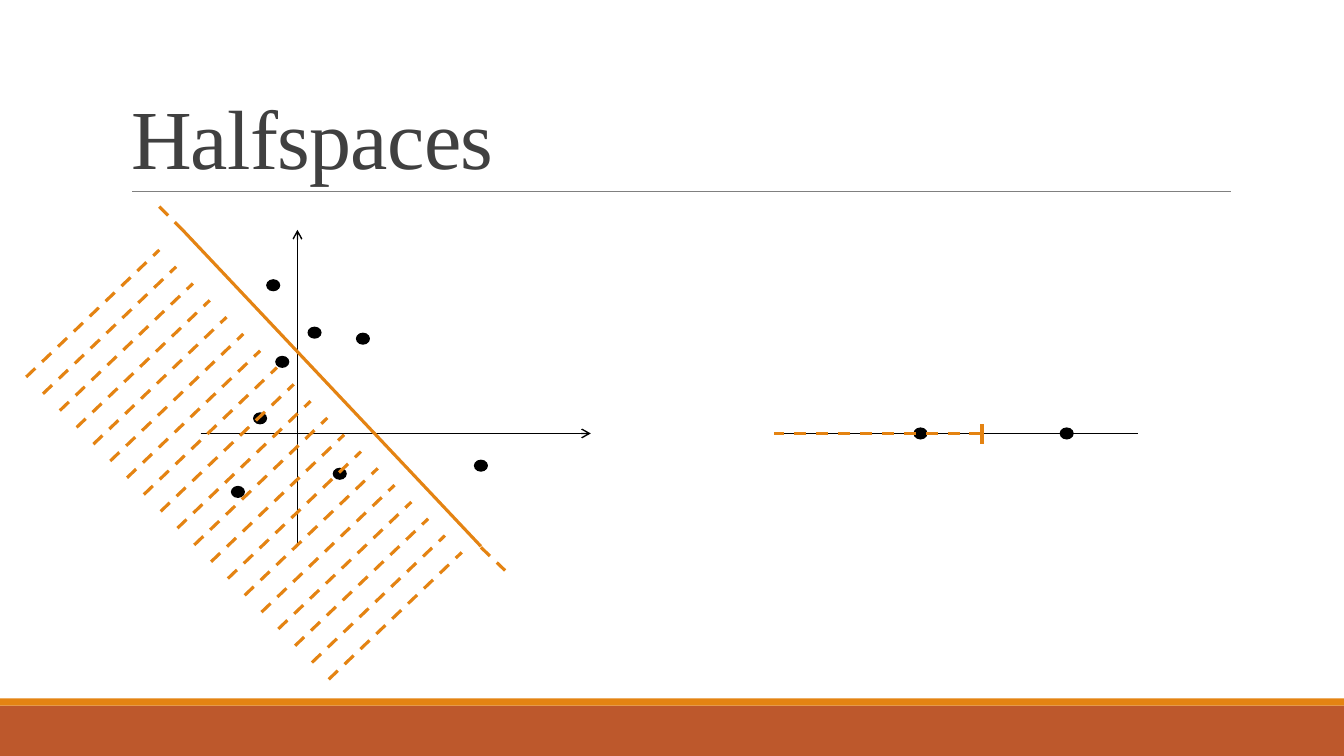
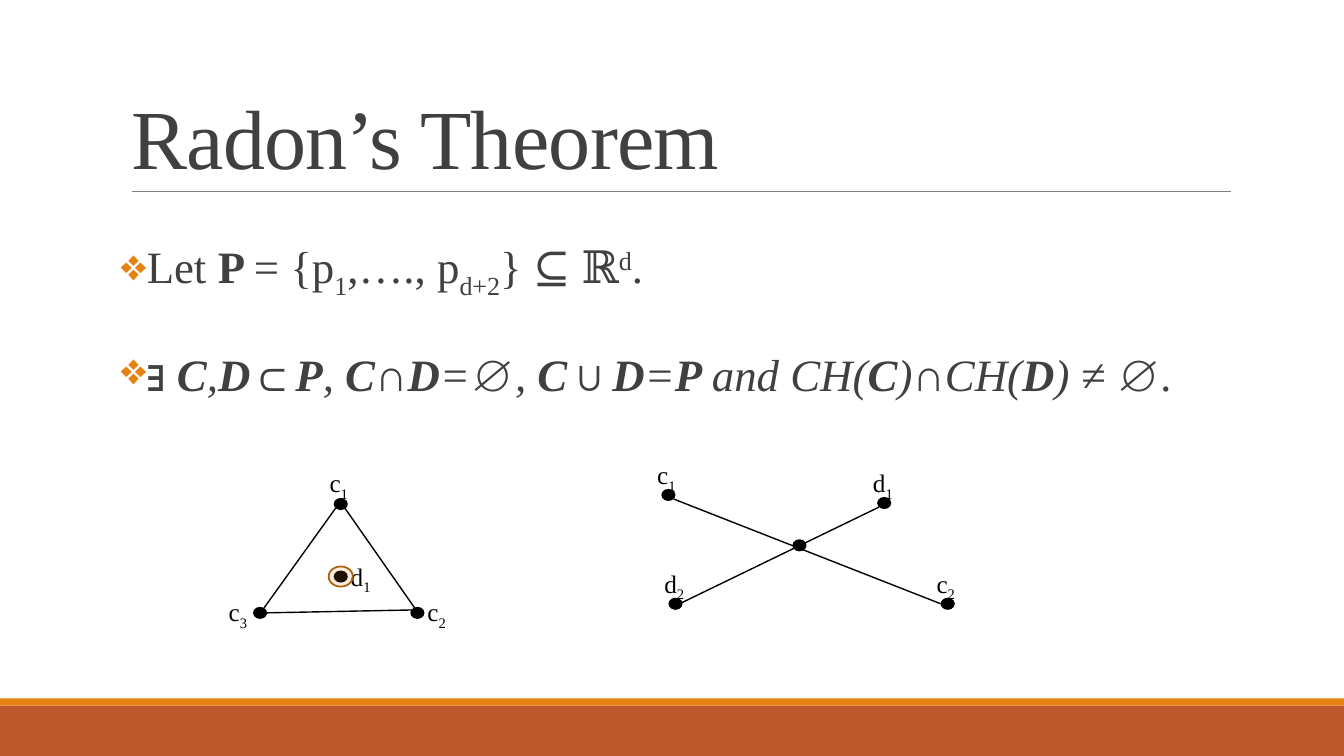
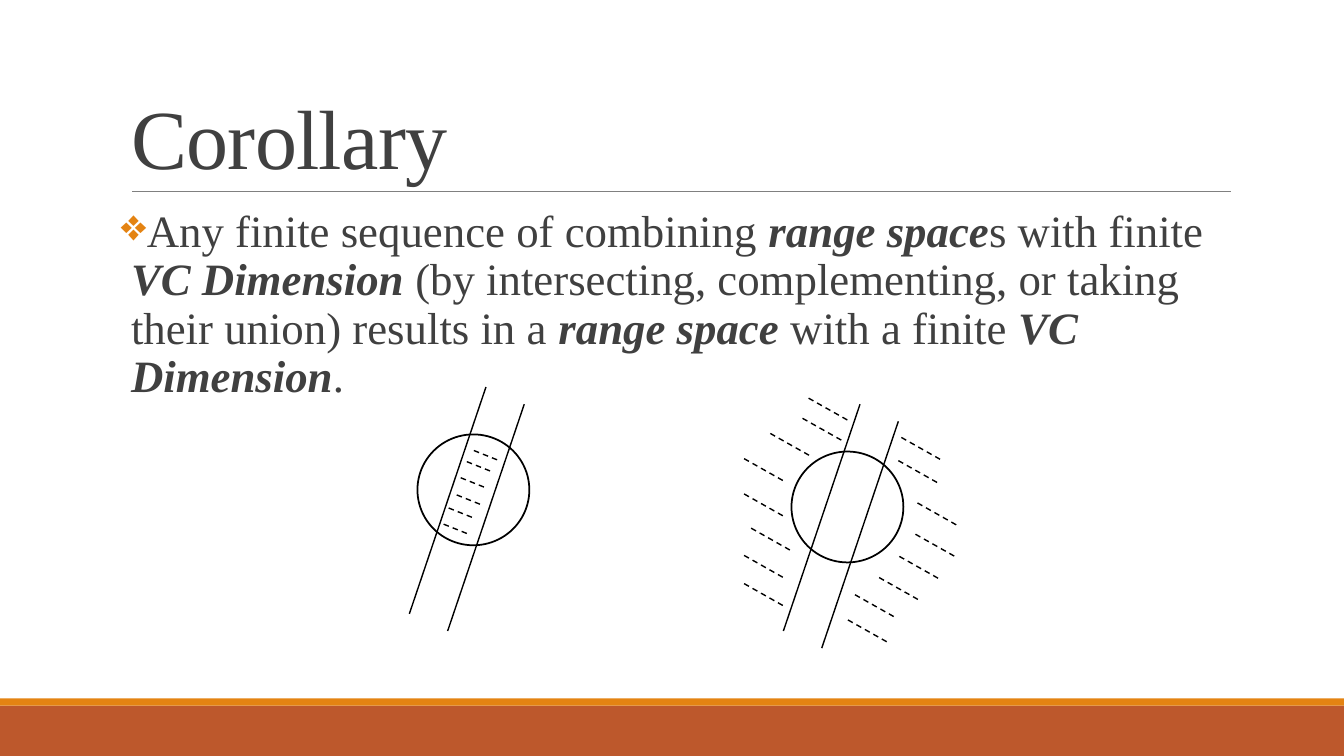
from lxml import etree
from pptx import Presentation
from pptx import util as u
from pptx.dml.color import RGBColor
from pptx.enum import dml, shapes, text
from pptx.oxml.ns import qn

BLACK = RGBColor(0, 0, 0)
GREY = RGBColor(0x40, 0x40, 0x40)
RULE = RGBColor(0x80, 0x80, 0x80)
GOLD = RGBColor(0xE4, 0x83, 0x12)
BROWN = RGBColor(0xA9, 0x61, 0x0D)
RUST = RGBColor(0xBD, 0x58, 0x2C)
FONT = "Times New Roman"
DOT = (0.14, 0.12)
SHIFT = {"sub": -25000, "sup": 30000}

POINTS = [(2.64, 2.77), (3.53, 3.3), (2.51, 4.09), (2.73, 3.53), (3.05, 3.24),
          (3.3, 4.64), (4.7, 4.56), (2.29, 4.82)]
AXES = [(2.95, 5.42, 2.95, 2.28), (1.99, 4.3, 5.86, 4.3)]
EDGE = (1.81, 2.28, 4.77, 5.42)
ENDS = [(4.77, 5.43, 5.01, 5.66), (1.58, 2.05, 1.81, 2.28)]
PAIR = [(9.06, 4.24), (10.51, 4.24)]

RADON = [
    [("Let ", ""), ("P ", "b"), ("= {p", ""), ("1", "sub"), (",…., p", ""),
     ("d+2", "sub"), ("} ⊆ ℝ", ""), ("d", "sup"), (".", "")],
    [("∃ ", "i"), ("C", "bi"), (",", "i"), ("D", "bi"), ("⊂", "i"), ("P", "bi"),
     (", ", "i"), ("C", "bi"), ("∩", "i"), ("D", "bi"), ("=∅, ", "i"), ("C", "bi"),
     ("∪", "i"), ("D", "bi"), ("=", "i"), ("P ", "bi"), ("and CH(", "i"),
     ("C", "bi"), (")∩CH(", "i"), ("D", "bi"), (") ≠ ∅.", "i")],
]
LABELS = [
    ("d", "1", (3.31, 5.66), (3.38, 5.52)),
    ("c", "1", (3.31, 4.94), (3.17, 4.59)),
    ("c", "2", (4.07, 6.02), (4.14, 5.87)),
    ("c", "3", (2.51, 6.02), (2.17, 5.87)),
    ("c", "1", (6.56, 4.85), (6.42, 4.51)),
    ("c", "2", (9.33, 5.93), (9.19, 5.59)),
    ("d", "2", (6.63, 5.93), (6.49, 5.59)),
    ("d", "1", (8.7, 4.93), (8.56, 4.59)),
]
SIDES = [(3.42, 5.04, 4.14, 6.07), (2.64, 6.08, 4.15, 6.05), (2.62, 6.03, 3.33, 5.04),
         (6.68, 4.95, 9.33, 5.99), (6.74, 5.99, 8.72, 5.03)]
CROSS = (7.86, 5.35)

COROL = [[
    ("Any finite sequence of combining ", ""), ("range space", "bi"),
    ("s with finite ", ""), ("VC Dimension ", "bi"),
    ("(by intersecting, complementing, or taking their union) results in a ", ""),
    ("range space ", "bi"), ("with a finite ", ""), ("VC Dimension", "bi"), (".", ""),
]]
STRIPS = [
    ((4.14, 4.31), (0.25, 0.1),
     [(4.7, 4.47), (4.63, 4.58), (4.57, 4.74), (4.53, 4.91), (4.45, 5.04), (4.4, 5.2)]),
    ((7.85, 4.48), (0.39, 0.22),
     [(8.02, 3.95), (7.96, 4.15), (7.64, 4.3), (7.38, 4.55), (7.38, 4.9), (7.45, 5.24),
      (7.38, 5.51), (7.38, 5.79), (8.94, 4.34), (8.91, 4.57), (9.1, 4.99), (9.08, 5.3),
      (8.92, 5.52), (8.72, 5.73), (8.48, 5.9), (8.41, 6.15)]),
]


def inch(vals):
    return [u.Inches(v) for v in vals]


def line(tree, ends, color=BLACK, width=1, dash=False, arrow=False):
    con = tree.add_connector(shapes.MSO_CONNECTOR.STRAIGHT, *inch(ends))
    con.line.color.rgb = color
    con.line.width = u.Pt(width)
    if dash:
        con.line.dash_style = dml.MSO_LINE.DASH
    if arrow:
        etree.SubElement(con.line._get_or_add_ln(), qn("a:tailEnd"), type="arrow")
    etree.SubElement(con.element.spPr, qn("a:effectLst"))
    return con


def shape(tree, kind, box, fill=None, edge=None):
    shp = tree.add_shape(kind, *inch(box))
    shp.shadow.inherit = False
    if fill is None:
        shp.fill.background()
    else:
        shp.fill.solid()
        shp.fill.fore_color.rgb = fill
    if edge is None:
        shp.line.fill.background()
    else:
        shp.line.color.rgb = edge
        shp.line.width = u.Pt(1.25)
    return shp


def oval(tree, box, fill=None, edge=None):
    return shape(tree, shapes.MSO_SHAPE.OVAL, box, fill, edge)


def dots(tree, spots):
    for spot in spots:
        oval(tree, spot + DOT, BLACK)


def runs(par, parts, size, color):
    for words, style in parts:
        run = par.add_run()
        run.text = words
        font = run.font
        font.name, font.size = FONT, u.Pt(size)
        font.color.rgb = color
        font.bold, font.italic = style in ("b", "bi"), style in ("i", "bi")
        if style in SHIFT:
            run._r.get_or_add_rPr().set("baseline", str(SHIFT[style]))


def body(tree, paras, space, after):
    frame = tree.add_textbox(*inch((1.2, 2.02, 11, 4.4))).text_frame
    frame.word_wrap = True
    frame.margin_left = frame.margin_right = 0
    for num, parts in enumerate(paras):
        par = frame.add_paragraph() if num else frame.paragraphs[0]
        par.line_spacing = space
        par.space_before, par.space_after = u.Pt(12), u.Pt(after)
        runs(par, parts, 32, GREY)
        prop = par._p.get_or_add_pPr()
        prop.set("marL", str(u.Inches(0.1)))
        prop.set("indent", str(u.Inches(-0.1)))
        tint = etree.SubElement(prop, qn("a:buClr"))
        etree.SubElement(tint, qn("a:srgbClr"), val=str(GOLD))
        etree.SubElement(prop, qn("a:buChar"), char="❖")


def label(tree, name, sub, spot):
    frame = tree.add_textbox(*inch(spot + (0.41, 0.4))).text_frame
    frame.word_wrap = False
    runs(frame.paragraphs[0], [(name, ""), (sub, "sub")], 18, BLACK)


def frame_up(layout, tree):
    rect = shapes.MSO_SHAPE.RECTANGLE
    for part in (shape(tree, rect, (0, 7, 13.33, 0.5), RUST),
                 shape(tree, rect, (0, 6.93, 13.33, 0.07), GOLD),
                 line(tree, (1.31, 1.9, 12.21, 1.9), RULE, 0.5)):
        layout.shapes.element.append(part.element)


def start(deck, words):
    slide = deck.slides.add_slide(deck.slide_layouts[5])
    title = slide.shapes.title
    title.left, title.top, title.width, title.height = inch((1.2, 0.31, 11, 1.59))
    frame = title.text_frame
    frame.auto_size = text.MSO_AUTO_SIZE.NONE
    frame.vertical_anchor = text.MSO_ANCHOR.BOTTOM
    par = frame.paragraphs[0]
    par.alignment = text.PP_ALIGN.LEFT
    par.line_spacing = 0.85
    runs(par, [(words, "")], 60, GREY)
    par.runs[0]._r.get_or_add_rPr().set("spc", "-50")
    return slide.shapes


def halves(deck):
    tree = start(deck, "Halfspaces")
    frame_up(deck.slide_layouts[5], tree)
    dots(tree, POINTS)
    for axis in AXES:
        line(tree, axis, arrow=True)
    group = tree.add_group_shape().shapes
    line(group, EDGE, GOLD, 2.25)
    for end in ENDS:
        line(group, end, GOLD, 2.25, True)
    for num in range(19):
        x, y = 0.26 + num / 6, 3.74 + num / 6
        line(tree, (x, y, x + 1.32, y - 1.26), GOLD, 2.25, True)
    line(tree, (7.68, 4.3, 11.29, 4.3))
    dots(tree, PAIR)
    line(tree, (9.74, 4.21, 9.74, 4.4), GOLD, 2.25)
    line(tree, (9.74, 4.3, 7.68, 4.3), GOLD, 2.25, True)


def radon(deck):
    tree = start(deck, "Radon’s Theorem")
    body(tree, RADON, 1.5, 2)
    for name, sub, dot, spot in LABELS:
        dots(tree, [dot])
        label(tree, name, sub, spot)
    ring = oval(tree, (3.26, 5.62, 0.24, 0.2), GOLD, BROWN)
    tint = ring.element.spPr.find(qn("a:solidFill"))[0]
    etree.SubElement(tint, qn("a:alpha"), val="14000")
    for side in SIDES:
        line(tree, side)
    dots(tree, [CROSS])


def corol(deck):
    tree = start(deck, "Corollary")
    body(tree, COROL, 0.9, 6)
    for (x, y), (dx, dy), marks in STRIPS:
        oval(tree, (x, y, 1.11, 1.1), edge=BLACK)
        for right, down in ((0, 0), (0.38, 0.17)):
            line(tree, (x + 0.68 + right, y - 0.47 + down,
                        x - 0.08 + right, y + 1.78 + down))
        for left, top in marks:
            line(tree, (left, top, left + dx, top + dy), dash=True)


def main():
    deck = Presentation()
    deck.slide_width, deck.slide_height = inch((13.33, 7.5))
    for build in (halves, radon, corol):
        build(deck)
    deck.save("out.pptx")


if __name__ == "__main__":
    main()
